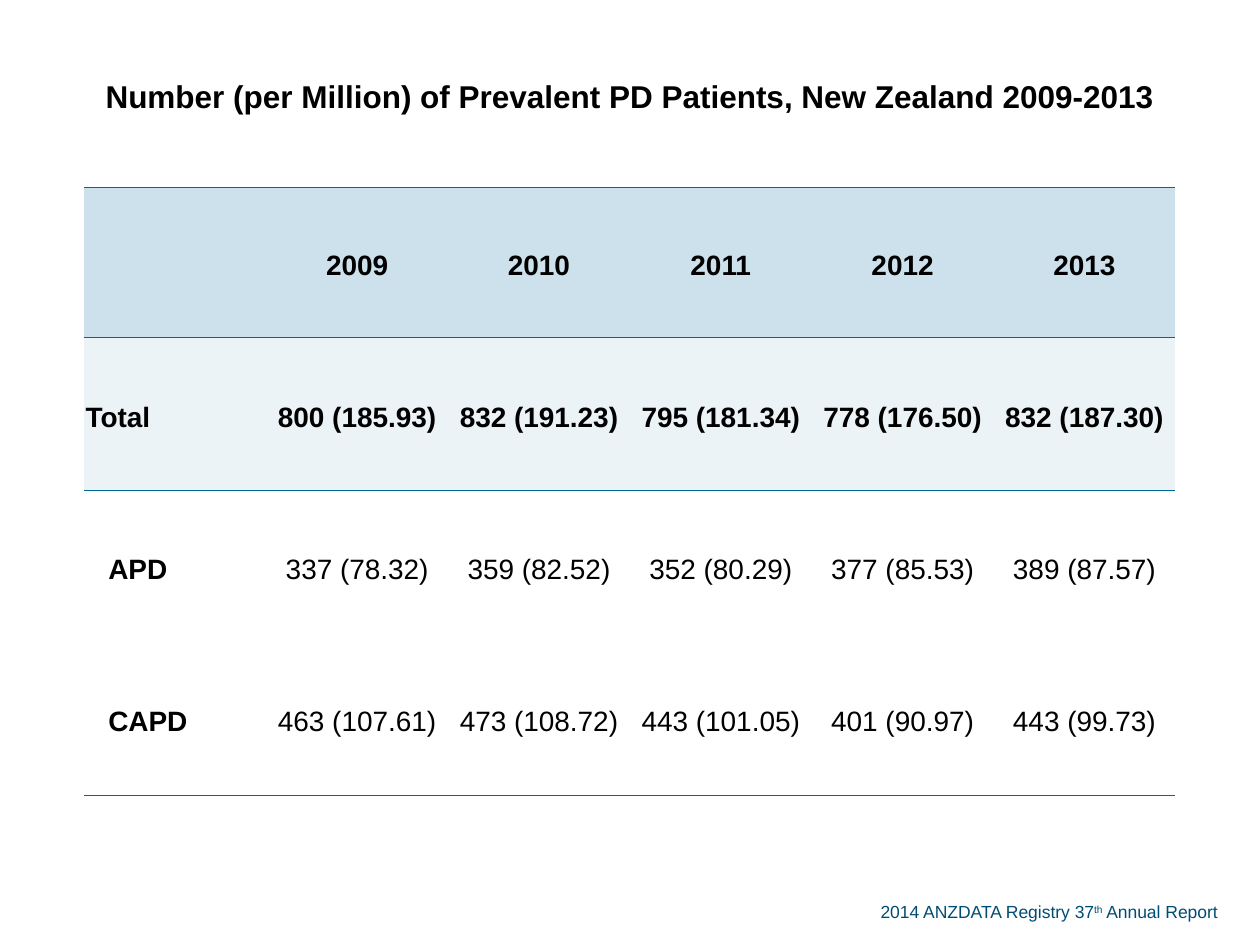
from pptx import Presentation
from pptx.dml.color import RGBColor
from pptx.enum.text import MSO_ANCHOR as ANCHOR, PP_ALIGN as ALIGN
from pptx.oxml import parse_xml
from pptx.oxml.ns import nsdecls, qn
from pptx.util import Inches, Pt

BLACK = RGBColor(0x00, 0x00, 0x00)
NAVY = RGBColor(0x00, 0x4D, 0x73)
RULE = RGBColor(0x00, 0x66, 0x99)
HEADER_FILL = RGBColor(0xCC, 0xE1, 0xEB)
TOTAL_FILL = RGBColor(0xEB, 0xF3, 0xF7)
PLAIN_TABLE = "{2D5ABB26-0587-4C30-8999-92F81FD0307C}"

TITLE = "Number (per Million) of Prevalent PD Patients, New Zealand 2009-2013"
ROWS = [
    ["", "2009", "2010", "2011", "2012", "2013"],
    ["Total", "800 (185.93)", "832 (191.23)", "795 (181.34)", "778 (176.50)", "832 (187.30)"],
    ["APD", "337 (78.32)", "359 (82.52)", "352 (80.29)", "377 (85.53)", "389 (87.57)"],
    ["CAPD", "463 (107.61)", "473 (108.72)", "443 (101.05)", "401 (90.97)", "443 (99.73)"],
]
ROW_HEIGHTS = [1.49, 1.19, 1.21, 1.21, 1.21]
ROW_FILLS = [None, HEADER_FILL, TOTAL_FILL, None, None]
RULED_SIDES = ["B", "TB", "T", "", "B"]


class SlideBuilder:
    font_name = "Arial"

    def __init__(self, slide):
        self.slide = slide

    def format_run(self, r, size, color, bold=False):
        r.font.name = self.font_name
        r.font.size = Pt(size)
        r.font.bold = bold
        r.font.color.rgb = color

    def text(self, left, top, width, height, parts, size, color):
        sp = self.slide.shapes.add_textbox(
            Inches(left), Inches(top), Inches(width), Inches(height))
        tf = sp.text_frame
        tf.word_wrap = True
        p = tf.paragraphs[0]
        for part, baseline in parts:
            r = p.add_run()
            r.text = part
            self.format_run(r, size, color)
            if baseline:
                r.font._element.set("baseline", str(baseline * 1000))

    def table(self, left, top, col_width, row_heights, cols):
        width, height = col_width * cols, sum(row_heights)
        frame = self.slide.shapes.add_table(
            len(row_heights), cols, Inches(left), Inches(top), Inches(width), Inches(height))
        table = frame.table
        table.first_row = table.horz_banding = False
        table._tbl.tblPr.find(qn("a:tableStyleId")).text = PLAIN_TABLE
        for col in table.columns:
            col.width = Inches(col_width)
        for row, row_height in zip(table.rows, row_heights):
            row.height = Inches(row_height)
        return table

    def cell_style(self, cell, fill, sides):
        for side in sides:
            cell._tc.get_or_add_tcPr().append(parse_xml(
                f'<a:ln{side} {nsdecls("a")} w="{Pt(0.5)}"><a:solidFill>'
                f'<a:srgbClr val="{RULE}"/></a:solidFill></a:ln{side}>'))
        if fill:
            cell.fill.solid()
            cell.fill.fore_color.rgb = fill
        else:
            cell.fill.background()
        cell.vertical_anchor = ANCHOR.MIDDLE
        cell.margin_left = cell.margin_right = cell.margin_top = Inches(0.01)
        cell.margin_bottom = 0

    def cell_text(self, cell, text, size, bold, align, space_after=0, indent=0):
        cell.text_frame.text = text
        cell.margin_left = Inches(0.01 + indent)
        p = cell.text_frame.paragraphs[0]
        p.alignment = align
        p.line_spacing = 1.19
        p.space_after = Pt(space_after)
        for r in p.runs:
            self.format_run(r, size, BLACK, bold)


def main():
    prs = Presentation()
    prs.slide_width, prs.slide_height = Inches(10), Inches(7.5)
    s = SlideBuilder(prs.slides.add_slide(prs.slide_layouts[6]))

    s.text(6.89, 7.1, 2.99, 0.27,
           [("2014 ANZDATA Registry 37", 0), ("th", 30), (" Annual Report", 0)], 10, NAVY)

    table = s.table(0.67, 0, 1.443, ROW_HEIGHTS, len(ROWS[0]))
    for row, fill, sides in zip(table.rows, ROW_FILLS, RULED_SIDES):
        for cell in row.cells:
            s.cell_style(cell, fill, sides)

    title = table.cell(0, 0)
    title.merge(table.cell(0, len(ROWS[0]) - 1))
    s.cell_text(title, TITLE, 18, True, ALIGN.CENTER)

    for i, values in enumerate(ROWS, start=1):
        for j, value in enumerate(values):
            is_label = j == 0
            s.cell_text(
                table.cell(i, j), value, 16,
                bold=is_label or i <= 2,
                align=ALIGN.LEFT if is_label else ALIGN.CENTER,
                space_after=14 if i >= 2 and not is_label else 0,
                indent=0.18 if is_label and i >= 3 else 0)

    prs.save("out.pptx")


if __name__ == "__main__":
    main()
